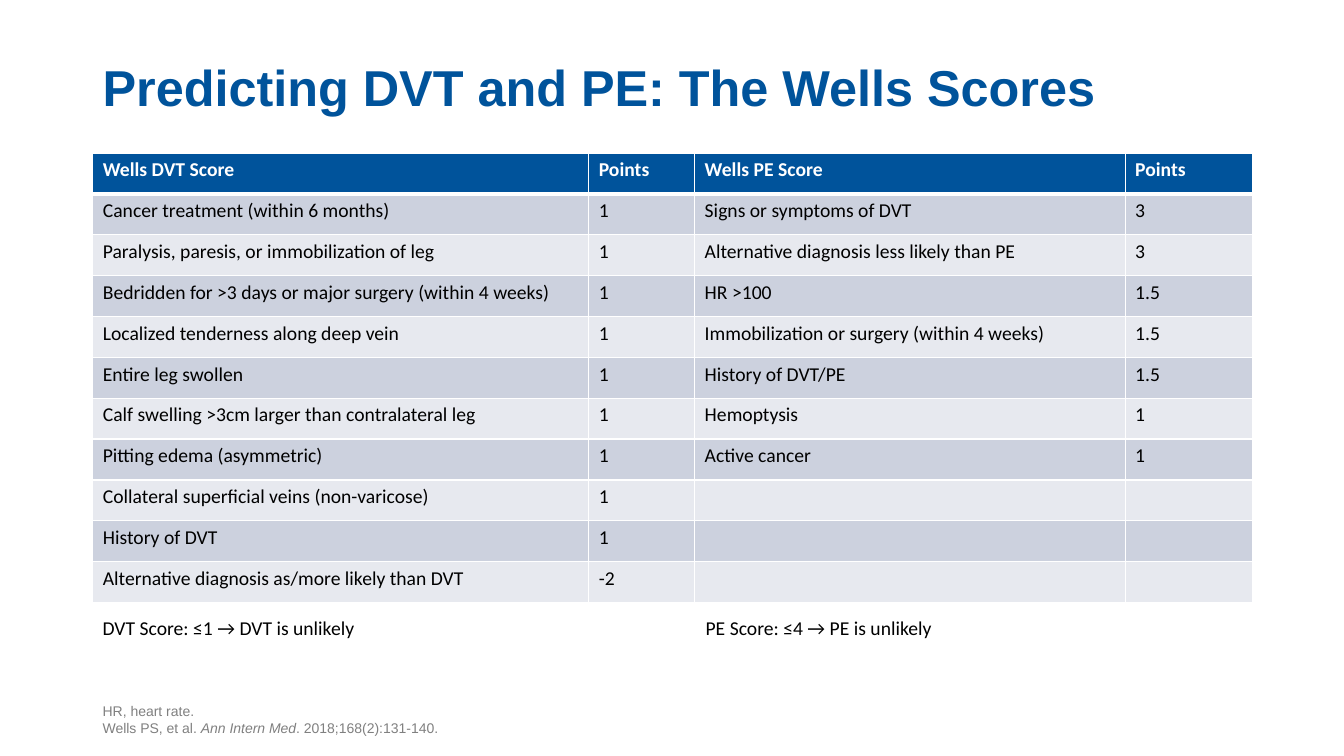
from lxml.etree import SubElement
from pptx import Presentation
from pptx.dml.color import RGBColor
from pptx.enum.text import MSO_ANCHOR as Anchor
from pptx.oxml.ns import qn
from pptx.util import Inches, Pt

BLUE = RGBColor(0x00, 0x53, 0x9B)
WHITE = RGBColor(0xFF, 0xFF, 0xFF)
BLACK = RGBColor(0x00, 0x00, 0x00)
GRAY = RGBColor(0x80, 0x80, 0x80)
DARK_BAND = RGBColor(0xCC, 0xD1, 0xDE)
LIGHT_BAND = RGBColor(0xE7, 0xE9, 0xEF)

LEFT, WIDTH = 0.92, 11.5
COLUMN_WIDTHS = [4.92, 1.05, 4.27, 1.26]
HEADINGS = ("Wells DVT Score", "Points", "Wells PE Score", "Points")
SCORES = [
    ("Cancer treatment (within 6 months)", "1", "Signs or symptoms of DVT", "3"),
    ("Paralysis, paresis, or immobilization of leg", "1",
     "Alternative diagnosis less likely than PE", "3"),
    ("Bedridden for >3 days or major surgery (within 4 weeks)", "1", "HR >100", "1.5"),
    ("Localized tenderness along deep vein", "1",
     "Immobilization or surgery (within 4 weeks)", "1.5"),
    ("Entire leg swollen", "1", "History of DVT/PE", "1.5"),
    ("Calf swelling >3cm larger than contralateral leg", "1", "Hemoptysis", "1"),
    ("Pitting edema (asymmetric)", "1", "Active cancer", "1"),
    ("Collateral superficial veins (non-varicose)", "1", "", ""),
    ("History of DVT", "1", "", ""),
    ("Alternative diagnosis as/more likely than DVT", "-2", "", ""),
]


def add_span(para, text, size, font, color, bold=False, italic=False):
    span = para.add_run()
    span.text = text
    span.font.size = Pt(size)
    span.font.name = font
    span.font.color.rgb = color
    span.font.bold = bold
    span.font.italic = italic


def add_text_box(page, left, top, width, height, anchor=Anchor.TOP):
    box = page.shapes.add_textbox(Inches(left), Inches(top), Inches(width), Inches(height))
    box.text_frame.word_wrap = True
    box.text_frame.vertical_anchor = anchor
    return box.text_frame


def add_title(page, left, top, width, height):
    para = add_text_box(page, left, top, width, height, Anchor.BOTTOM).paragraphs[0]
    para.line_spacing = 0.9
    add_span(para, "Predicting DVT and PE: The Wells Scores", 36, "Arial", BLUE, bold=True)


def set_borders(cell, top, bottom):
    properties = cell._tc.get_or_add_tcPr()
    for side, width in (("L", 1), ("R", 1), ("T", top), ("B", bottom)):
        line = SubElement(properties, qn(f"a:ln{side}"), w=str(Pt(width)))
        fill = SubElement(line, qn("a:solidFill"))
        SubElement(fill, qn("a:srgbClr"), val=str(WHITE))


def add_score_table(page, left, top, width, height):
    rows = [HEADINGS] + SCORES
    table = page.shapes.add_table(len(rows), len(HEADINGS), Inches(left), Inches(top),
                                  Inches(width), Inches(height)).table
    for column, column_width in zip(table.columns, COLUMN_WIDTHS):
        column.width = Inches(column_width)
    for row_index, row in enumerate(rows):
        table.rows[row_index].height = Inches(height / len(rows))
        is_header = row_index == 0
        band = BLUE if is_header else DARK_BAND if row_index % 2 else LIGHT_BAND
        for column_index, text in enumerate(row):
            cell = table.cell(row_index, column_index)
            set_borders(cell, 3 if row_index == 1 else 1, 3 if is_header else 1)
            cell.fill.solid()
            cell.fill.fore_color.rgb = band
            para = cell.text_frame.paragraphs[0]
            if text:
                add_span(para, text, 14, "Calibri", WHITE if is_header else BLACK, is_header)
            else:
                para.font.size = Pt(14)


def add_threshold(page, text, left, top, width, height):
    para = add_text_box(page, left, top, width, height).paragraphs[0]
    add_span(para, text, 14, "Calibri", BLACK)


def add_footnote(page, left, top, width, height):
    frame = add_text_box(page, left, top, width, height, Anchor.BOTTOM)
    para = frame.paragraphs[0]
    add_span(para, "HR, heart rate.", 10, "Arial", GRAY)
    para.add_line_break()
    add_span(para, "Wells PS, et al. ", 10, "Arial", GRAY)
    add_span(para, "Ann Intern Med", 10, "Arial", GRAY, italic=True)
    add_span(para, ". 2018;168(2):131-140.", 10, "Arial", GRAY)


def main():
    deck = Presentation()
    deck.slide_width = Inches(13.33)
    deck.slide_height = Inches(7.5)
    page = deck.slides.add_slide(deck.slide_layouts[6])
    add_score_table(page, LEFT, 1.52, WIDTH, 4.46)
    add_title(page, LEFT, 0, WIDTH, 1.21)
    add_threshold(page, "DVT Score: ≤1 → DVT is unlikely", LEFT, 6.06, 4.9, 0.34)
    add_threshold(page, "PE Score: ≤4 → PE is unlikely", 6.9, 6.06, 4.28, 0.34)
    add_footnote(page, LEFT, 6.95, WIDTH, 0.4)
    deck.save("out.pptx")


if __name__ == "__main__":
    main()
